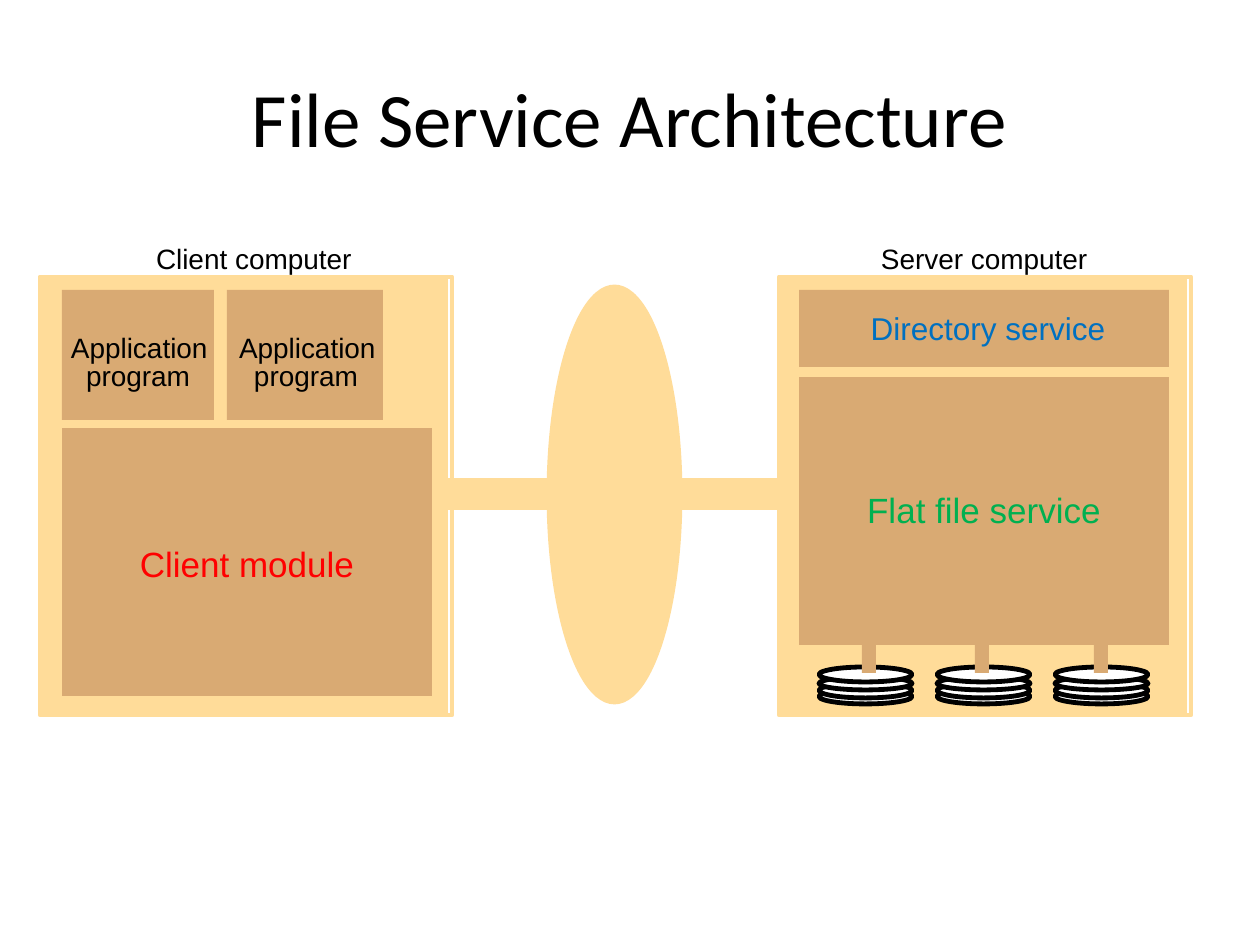
from pptx import Presentation
from pptx.dml.color import RGBColor
from pptx.enum.shapes import MSO_SHAPE
from pptx.enum.text import MSO_ANCHOR, PP_ALIGN
from pptx.util import Emu, Pt

PX_PER_INCH = 126
SAND, TAN, BLACK, WHITE = "FFDC99", "D9AA73", "000000", "FFFFFF"


def px(length):
    return Emu(round(length * 914400 / PX_PER_INCH))


def color(hex_string):
    return RGBColor.from_string(hex_string)


def add_block(page, box, fill=None, line=None, kind=MSO_SHAPE.RECTANGLE):
    shape = page.shapes.add_shape(kind, *map(px, box))
    shape.shadow.inherit = False
    if fill:
        shape.fill.solid()
        shape.fill.fore_color.rgb = color(fill)
    else:
        shape.fill.background()
    if line:
        shape.line.color.rgb = color(line)
        shape.line.width = Pt(2.75)
    else:
        shape.line.fill.background()
    return shape


def add_text(page, text, box, size=16, font="Arial", ink=BLACK,
             align=PP_ALIGN.LEFT, anchor=MSO_ANCHOR.TOP):
    frame = page.shapes.add_textbox(*map(px, box)).text_frame
    frame.word_wrap = True
    frame.vertical_anchor = anchor
    frame.margin_left = frame.margin_right = 0
    frame.margin_top = frame.margin_bottom = 0
    para = frame.paragraphs[0]
    para.alignment = align
    span = para.add_run()
    span.text = text
    span.font.size = Pt(size)
    span.font.name = font
    span.font.color.rgb = color(ink)


def add_computer(page, box, name, name_left, name_width):
    """Sand panel with a slightly larger outline and its name above."""
    left, top, width, height = box
    add_block(page, box, fill=SAND)
    add_block(page, (left, top, width + 4, height + 2), line=SAND)
    add_text(page, name, (left + name_left, top - 35, name_width, 28))


def add_module(page, box, text, text_box, size, ink):
    """Tan block with a centred caption, placed relative to the block."""
    left, top, width, height = box
    shift_x, shift_y, text_height = text_box
    add_block(page, box, fill=TAN)
    add_text(page, text, (left + shift_x, top + shift_y, width, text_height),
             size=size, ink=ink, align=PP_ALIGN.CENTER)


def add_application(page, box, text_left):
    left, top, width, height = box
    add_block(page, box, fill=TAN)
    lines = (("Application", 0, 144), ("program", 15, 110))
    for row, (word, indent, word_width) in enumerate(lines):
        add_text(page, word, (left + text_left + indent, top + 41 + 28 * row,
                              word_width, 28))


def add_disk_stack(page, box, stem_left):
    left, top, width, height = box
    # Platters from the bottom up, then the stem to the file service
    for rise, thickness in ((22, 15), (16, 15), (10, 13), (0, 15)):
        add_block(page, (left, top + rise, width, thickness), fill=WHITE,
                  line=BLACK, kind=MSO_SHAPE.OVAL)
    add_block(page, (left + stem_left, top - 56, 14, 62), fill=TAN)


def add_client(page, box):
    left, top, width, height = box
    add_computer(page, box, "Client computer", 116, 205)
    add_application(page, (left + 22, top + 13, 152, 130), 9)
    add_application(page, (left + 187, top + 13, 156, 130), 12)
    add_module(page, (left + 22, top + 151, 370, 268), "Client module",
               (0, 114, 57), 20, "FF0000")


def add_server(page, box):
    left, top, width, height = box
    add_computer(page, box, "Server computer", 102, 217)
    for index, stem_left in enumerate((43, 38, 39)):
        add_disk_stack(page, (left + 40 + 118 * index, top + 390, 93, 37),
                       stem_left)
    add_module(page, (left + 20, top + 100, 370, 268), "Flat file service",
               (0, 112, 53), 20, "00B050")
    add_module(page, (left + 20, top + 13, 370, 77), "Directory service",
               (4, 19, 28), 18, "0070C0")


def add_network(page, box):
    left, top, width, height = box
    add_block(page, (left + 111, top, 131, 415), fill=SAND, line=SAND,
              kind=MSO_SHAPE.OVAL)
    add_block(page, (left, top + 191, width, 32), fill=SAND)


def main():
    deck = Presentation()
    deck.slide_width, deck.slide_height = px(1260), px(945)
    page = deck.slides.add_slide(deck.slide_layouts[6])

    # Title
    add_text(page, "File Service Architecture", (63, 38, 1134, 157), size=44,
             font="Calibri", align=PP_ALIGN.CENTER, anchor=MSO_ANCHOR.MIDDLE)

    # Two computers joined by a network
    add_server(page, (779, 277, 408, 436))
    add_client(page, (40, 277, 408, 436))
    add_network(page, (438, 287, 353, 415))

    deck.save("out.pptx")


if __name__ == "__main__":
    main()
